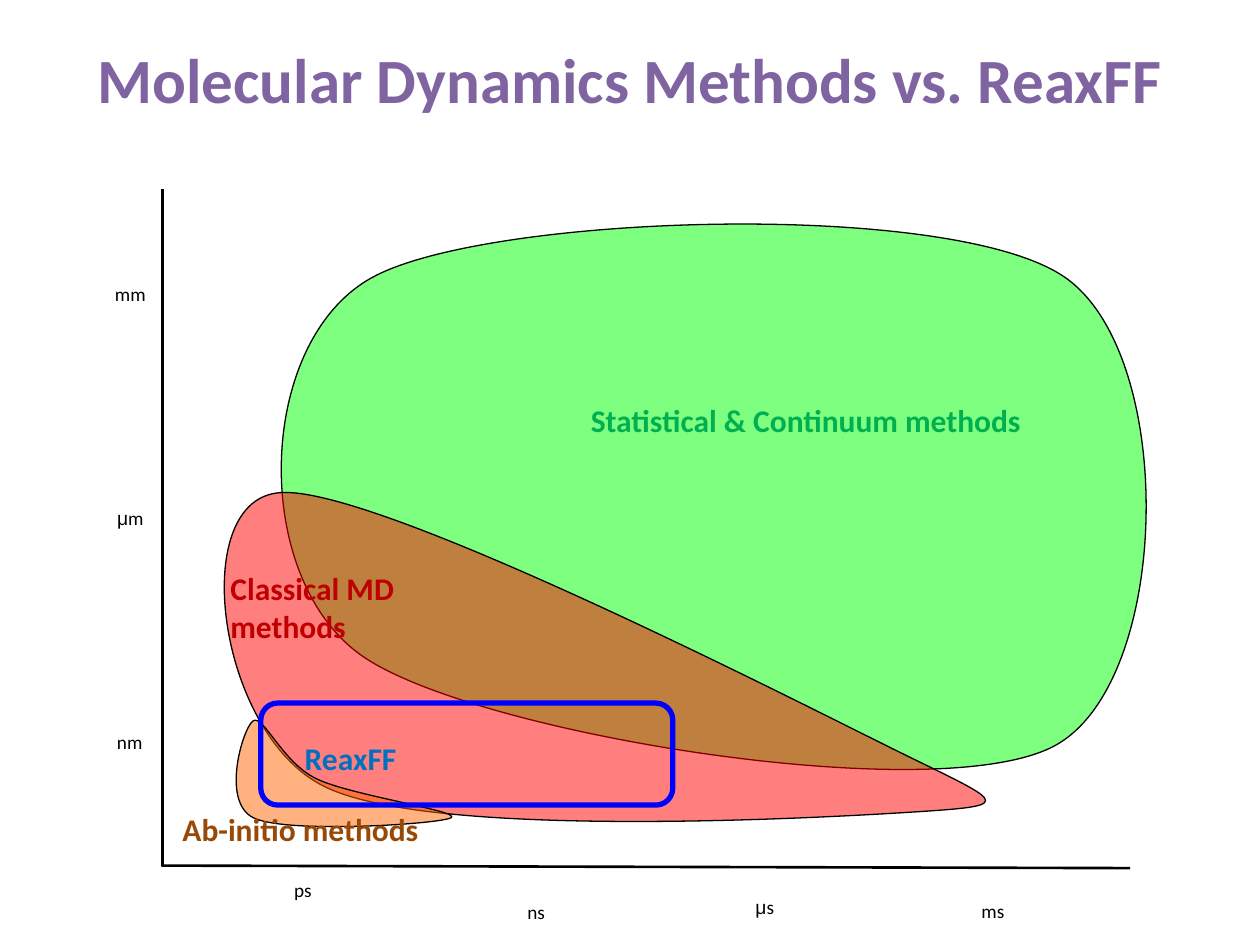
from lxml import etree
from pptx import Presentation
from pptx.dml.color import RGBColor
from pptx.enum import shapes, text
from pptx.oxml.ns import qn
from pptx.util import Inches, Pt

TITLE = "Molecular Dynamics Methods vs. ReaxFF"
MIDDLE, TOP = text.MSO_ANCHOR.MIDDLE, text.MSO_ANCHOR.TOP

AXES = [
    ((1.29, 1.5), (1.29, 6.87)),
    ((8.97, 6.89), (1.28, 6.87)),
]
SCALE_LABELS = [
    ("ps", (2.11, 6.89, 0.59, 0.55), TOP),
    ("ns", (3.96, 6.95, 0.59, 0.55), MIDDLE),
    ("μs", (5.77, 6.94, 0.6, 0.51), MIDDLE),
    ("ms", (7.55, 6.94, 0.66, 0.55), MIDDLE),
    ("nm", (0.68, 5.6, 0.7, 0.55), MIDDLE),
    ("μm", (0.68, 3.85, 0.71, 0.51), MIDDLE),
    ("mm", (0.65, 2.04, 0.77, 0.55), MIDDLE),
]
METHODS = [
    {"name": "Statistical & Continuum methods", "box": (4.59, 3.13, 4.21, 0.47),
     "color": "00B050", "fill": "00FF00",
     "curve": [(2.96, 2.2), (2.03, 2.7), (1.98, 4.59), (2.88, 5.21),
               (3.78, 5.83), (7.44, 6.42), (8.37, 5.92),
               (9.3, 5.42), (9.35, 2.82), (8.45, 2.2),
               (7.55, 1.58), (3.88, 1.7), (2.96, 2.2)]},
    {"name": "Classical MD methods", "box": (1.73, 4.47, 1.89, 0.76),
     "color": "C00000", "fill": "FF0000",
     "curve": [(2.23, 3.91), (1.48, 3.95), (1.72, 5.82), (2.57, 6.24),
               (3.42, 6.67), (6.57, 6.49), (7.33, 6.44),
               (8.08, 6.39), (7.95, 6.37), (7.1, 5.95),
               (6.25, 5.53), (2.99, 3.86), (2.23, 3.91)]},
    {"name": "Ab-initio methods", "box": (1.35, 6.38, 2.4, 0.47),
     "color": "984807", "fill": "FF6600",
     "curve": [(2.01, 5.72), (1.93, 5.77), (1.75, 6.36), (2.01, 6.49),
               (2.27, 6.62), (3.5, 6.54), (3.58, 6.49),
               (3.67, 6.44), (2.77, 6.31), (2.51, 6.18),
               (2.24, 6.05), (2.09, 5.67), (2.01, 5.72)]},
]
REAXFF = {"name": "ReaxFF", "box": (2.32, 5.82, 1.22, 0.47), "color": "0070C0"}
REAXFF_RANGE = (2.07, 5.58, 3.27, 0.81)


def inches(values):
    return [Inches(value) for value in values]


def paint(color_format, color):
    color_format.rgb = RGBColor.from_string(color)


def style_line(line, color, width):
    paint(line.fill_color if hasattr(line, "fill_color") else line.color, color)
    line.width = Pt(width)


def style_font(font, size, color, bold=False, name="Calibri"):
    font.name, font.size, font.bold = name, Pt(size), bold
    paint(font.color, color)


def add_axis(slide, start, end):
    axis = slide.shapes.add_connector(
        shapes.MSO_CONNECTOR.STRAIGHT, *inches(start + end))
    style_line(axis.line, "000000", 1.5)
    etree.SubElement(axis._element.spPr, qn("a:effectLst"))


def add_scale_label(slide, unit, box, anchor):
    frame = slide.shapes.add_textbox(*inches(box)).text_frame
    frame.word_wrap = False
    frame.vertical_anchor = anchor
    label = frame.paragraphs[0]
    label.alignment = text.PP_ALIGN.CENTER
    label.line_spacing = 1.02 if "μ" in unit else 1.17
    style_font(label.font, 11, "000000")
    for letter in unit if "μ" in unit else [unit]:
        run = label.add_run()
        run.text = letter
        if letter == "μ":
            run.font.name = "Arial"


def add_region(slide, curve, color):
    builder = slide.shapes.build_freeform(*inches(curve[0]), scale=1.0)
    builder.add_line_segments([inches(point) for point in curve[1:]], close=True)
    region = builder.convert_to_shape()
    region.shadow.inherit = False
    segments = list(region._element.iter(qn("a:lnTo")))
    for first in range(0, len(segments), 3):
        bezier = etree.Element(qn("a:cubicBezTo"))
        segments[first].addprevious(bezier)
        for segment in segments[first:first + 3]:
            bezier.append(segment[0])
            segment.getparent().remove(segment)
    region.fill.solid()
    paint(region.fill.fore_color, color)
    rgb = region._element.spPr.find(qn("a:solidFill"))[0]
    etree.SubElement(rgb, qn("a:alpha"), val="50000")
    style_line(region.line, "000000", 0.75)


def add_method_label(slide, name, box, color):
    frame = slide.shapes.add_textbox(*inches(box)).text_frame
    frame.word_wrap = True
    frame.text = name
    style_font(frame.paragraphs[0].font, 18, color, bold=True)


def main():
    deck = Presentation()
    deck.slide_width, deck.slide_height = inches((10, 7.5))
    slide = deck.slides.add_slide(deck.slide_layouts[5])

    title = slide.shapes.title
    title.left, title.top, title.width, title.height = inches((0, 0, 10, 1.25))
    title.text_frame.text = TITLE
    title.text_frame.vertical_anchor = MIDDLE
    heading = title.text_frame.paragraphs[0]
    heading.alignment = text.PP_ALIGN.CENTER
    style_font(heading.font, 36, "8064A2", bold=True)

    for start, end in AXES:
        add_axis(slide, start, end)
    for unit, box, anchor in SCALE_LABELS:
        add_scale_label(slide, unit, box, anchor)
    for method in METHODS:
        add_region(slide, method["curve"], method["fill"])
        add_method_label(slide, method["name"], method["box"], method["color"])
    add_method_label(slide, **REAXFF)

    frame = slide.shapes.add_shape(
        shapes.MSO_SHAPE.ROUNDED_RECTANGLE, *inches(REAXFF_RANGE))
    frame.shadow.inherit = False
    frame.fill.background()
    style_line(frame.line, "0000FF", 3)

    deck.save("out.pptx")


if __name__ == "__main__":
    main()
